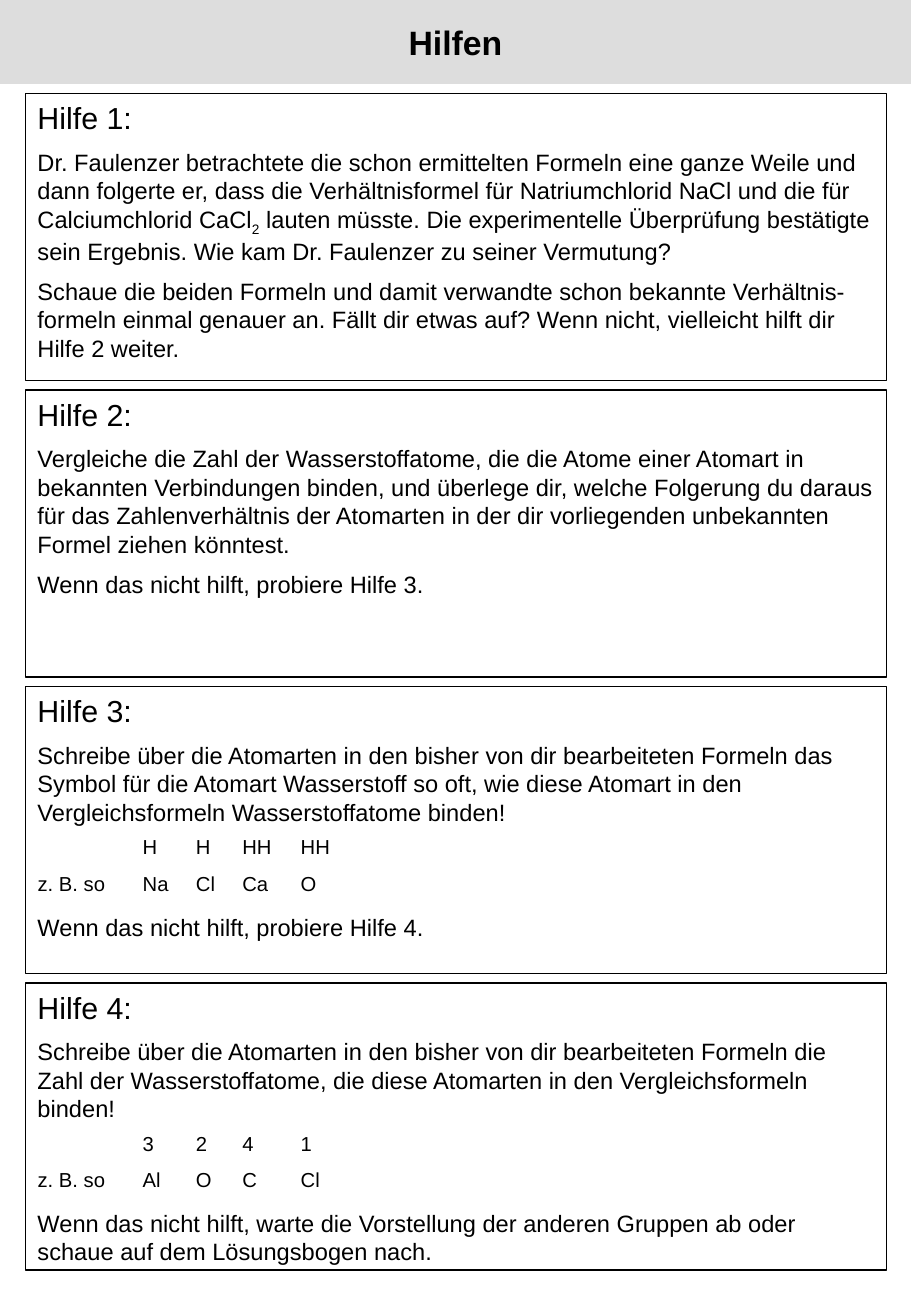
import dataclasses

import pptx
import pptx.dml.color
import pptx.enum.shapes
import pptx.enum.text
import pptx.oxml.ns
import pptx.util

Pt = pptx.util.Pt
RGB = pptx.dml.color.RGBColor


@dataclasses.dataclass(frozen=True)
class Theme:
    font: str = "Arial"
    ink: RGB = RGB(0, 0, 0)
    band: RGB = RGB(0xDD, 0xDD, 0xDD)
    title: int = 20
    heading: int = 18
    body: int = 14
    cell: int = 12
    gap: int = 7


THEME = Theme()
PAGE_W, PAGE_H = 540, 779.76
BAND_H = 49.7
LEFT, WIDTH = 15.1, 510.5
TOP, HEIGHT, PITCH = 55.4, 170, 175.7
TABLE_DY, CLOSING_DY = 85, 130.3
ROW_H = 21.6
COL_WIDTHS = (62.3, 31.6, 27.5, 34.6, 155.5)
NO_GRID = "{2D5ABB26-0587-4C30-8999-92F81FD0307C}"

HELPS = [
    {
        "paras": [
            [
                ("Dr. Faulenzer betrachtete die schon ermittelten Formeln eine ganze Weile und "
                 "dann folgerte er, dass die Verhältnisformel für Natriumchlorid NaCl und die "
                 "für Calciumchlorid CaCl", False),
                ("2", True),
                (" lauten müsste. Die experimentelle Überprüfung bestätigte sein Ergebnis. "
                 "Wie kam Dr. Faulenzer zu seiner Vermutung?", False),
            ],
            [("Schaue die beiden Formeln und damit verwandte schon bekannte Verhältnis-formeln "
              "einmal genauer an. Fällt dir etwas auf? Wenn nicht, vielleicht hilft dir "
              "Hilfe 2 weiter.", False)],
        ],
    },
    {
        "paras": [
            [("Vergleiche die Zahl der Wasserstoffatome, die die Atome einer Atomart in "
              "bekannten Verbindungen binden, und überlege dir, welche Folgerung du daraus "
              "für das Zahlenverhältnis der Atomarten in der dir vorliegenden unbekannten "
              "Formel ziehen könntest.", False)],
            [("Wenn das nicht hilft, probiere Hilfe 3.", False)],
        ],
    },
    {
        "paras": [
            [("Schreibe über die Atomarten in den bisher von dir bearbeiteten Formeln das "
              "Symbol für die Atomart Wasserstoff so oft, wie diese Atomart in den "
              "Vergleichsformeln Wasserstoffatome binden!", False)],
        ],
        "rows": [("", "H", "H", "HH", "HH"), ("z. B. so", "Na", "Cl", "Ca", "O")],
        "closing": "Wenn das nicht hilft, probiere Hilfe 4.",
    },
    {
        "paras": [
            [("Schreibe über die Atomarten in den bisher von dir bearbeiteten Formeln die "
              "Zahl der Wasserstoffatome, die diese Atomarten in den Vergleichsformeln "
              "binden!", False)],
        ],
        "rows": [("", "3", "2", "4", "1"), ("z. B. so", "Al", "O", "C", "Cl")],
        "closing": "Wenn das nicht hilft, warte die Vorstellung der anderen Gruppen ab oder "
                   "schaue auf dem Lösungsbogen nach.",
    },
]


def add_run(p, text, size, bold=False, subscript=False):
    r = p.add_run()
    r.text = text
    r.font.name = THEME.font
    r.font.size = Pt(size)
    r.font.bold = bold
    r.font.color.rgb = THEME.ink
    if subscript:
        r.font._element.set("baseline", "-25000")


def set_title(s, text):
    sp = s.shapes.title
    sp.left, sp.top, sp.width, sp.height = Pt(0), Pt(0), Pt(PAGE_W), Pt(BAND_H)
    sp.fill.solid()
    sp.fill.fore_color.rgb = THEME.band
    tf = sp.text_frame
    tf.auto_size = pptx.enum.text.MSO_AUTO_SIZE.NONE
    tf.vertical_anchor = pptx.enum.text.MSO_ANCHOR.MIDDLE
    p = tf.paragraphs[0]
    p.alignment = pptx.enum.text.PP_ALIGN.CENTER
    add_run(p, text, THEME.title, bold=True)


def add_frame(s, top, heading, paras):
    sp = s.shapes.add_shape(pptx.enum.shapes.MSO_SHAPE.RECTANGLE,
                            Pt(LEFT), Pt(top), Pt(WIDTH), Pt(HEIGHT))
    sp.shadow.inherit = False
    sp.fill.background()
    sp.line.color.rgb = THEME.ink
    sp.line.width = Pt(0.75)
    tf = sp.text_frame
    tf.word_wrap = True
    tf.vertical_anchor = pptx.enum.text.MSO_ANCHOR.TOP
    p = tf.paragraphs[0]
    p.alignment = pptx.enum.text.PP_ALIGN.LEFT
    add_run(p, heading, THEME.heading)
    for runs in paras:
        p = tf.add_paragraph()
        p.alignment = pptx.enum.text.PP_ALIGN.LEFT
        p.space_before = Pt(THEME.gap)
        for text, subscript in runs:
            add_run(p, text, THEME.body, subscript=subscript)


def add_symbol_table(s, top, rows):
    frame = s.shapes.add_table(len(rows), len(COL_WIDTHS), Pt(LEFT), Pt(top),
                               Pt(sum(COL_WIDTHS)), Pt(ROW_H * len(rows)))
    table = frame.table
    table.first_row = table.horz_banding = False
    table._tbl.tblPr.find(pptx.oxml.ns.qn("a:tableStyleId")).text = NO_GRID
    for column, width in zip(table.columns, COL_WIDTHS):
        column.width = Pt(width)
    for i, row in enumerate(rows):
        table.rows[i].height = Pt(ROW_H)
        for j, text in enumerate(row):
            cell = table.cell(i, j)
            cell.fill.background()
            p = cell.text_frame.paragraphs[0]
            p.font.size = Pt(THEME.cell)
            if text:
                add_run(p, text, THEME.cell)


def add_closing(s, top, text):
    sp = s.shapes.add_textbox(Pt(LEFT), Pt(top), Pt(WIDTH), Pt(24))
    tf = sp.text_frame
    tf.word_wrap = True
    tf.auto_size = pptx.enum.text.MSO_AUTO_SIZE.SHAPE_TO_FIT_TEXT
    add_run(tf.paragraphs[0], text, THEME.body)


def main():
    prs = pptx.Presentation()
    prs.slide_width, prs.slide_height = Pt(PAGE_W), Pt(PAGE_H)
    s = prs.slides.add_slide(prs.slide_layouts[5])
    set_title(s, "Hilfen")
    for i, item in enumerate(HELPS):
        top = TOP + i * PITCH
        add_frame(s, top, f"Hilfe {i + 1}:", item["paras"])
        if "rows" in item:
            add_symbol_table(s, top + TABLE_DY, item["rows"])
            add_closing(s, top + CLOSING_DY, item["closing"])
    prs.save("out.pptx")


if __name__ == "__main__":
    main()
